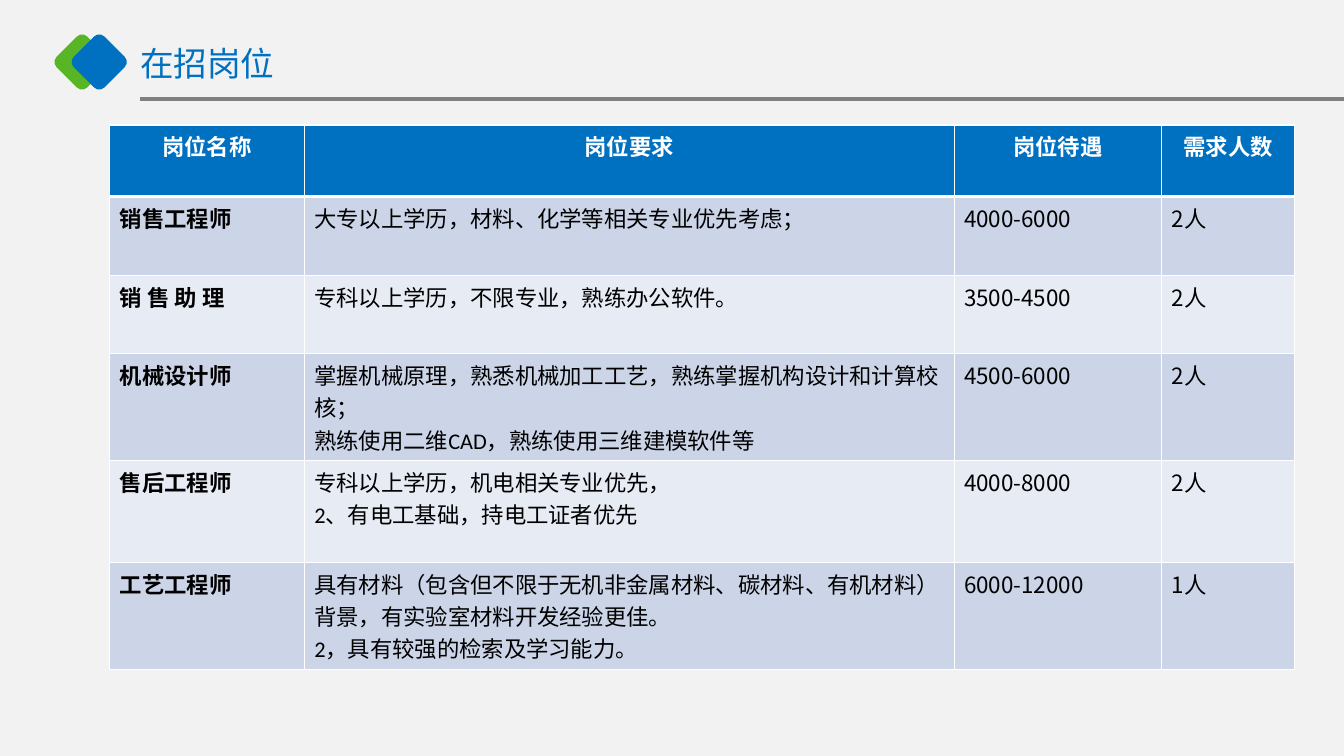
from dataclasses import dataclass

from lxml.etree import SubElement
from pptx import Presentation
from pptx.dml.color import RGBColor
from pptx.enum.lang import MSO_LANGUAGE_ID as LANG
from pptx.enum.shapes import MSO_CONNECTOR as CONNECTOR, MSO_SHAPE as SHAPE
from pptx.enum.text import MSO_ANCHOR as ANCHOR, MSO_AUTO_SIZE as AUTO_SIZE, PP_ALIGN as ALIGN
from pptx.oxml.ns import qn
from pptx.util import Emu, Pt

PX_PER_INCH = 100
CJK, LATIN = "Noto Sans CJK SC", "Calibri"
BLUE, GREEN, GRAY, PALE = "0070C0", "58B525", "808080", "F2F2F2"
WHITE, BLACK = "FFFFFF", "000000"
BANDS = ("CCD5E8", "E7EBF4")


@dataclass(frozen=True)
class Diamond:
    left: int
    color: str


@dataclass(frozen=True)
class Column:
    heading: str
    width: int
    font: str
    bold: bool = False


@dataclass(frozen=True)
class Job:
    height: int
    name: str
    needs: str
    pay: str
    count: str


DIAMONDS = (Diamond(60, GREEN), Diamond(77, BLUE))
COLUMNS = (
    Column("岗位名称", 193, LATIN, True),
    Column("岗位要求", 645, LATIN),
    Column("岗位待遇", 206, CJK),
    Column("需求人数", 132, CJK),
)
HEADER_HEIGHT = 71
JOBS = (
    Job(78, "销售工程师", "大专以上学历，材料、化学等相关专业优先考虑；", "4000-6000", "2人"),
    Job(78, "销 售 助 理", "专科以上学历，不限专业，熟练办公软件。", "3500-4500", "2人"),
    Job(106, "机械设计师",
        "掌握机械原理，熟悉机械加工工艺，熟练掌握机构设计和计算校核；\n"
        "熟练使用二维CAD，熟练使用三维建模软件等", "4500-6000", "2人"),
    Job(101, "售后工程师",
        "专科以上学历，机电相关专业优先，\n2、有电工基础，持电工证者优先", "4000-8000", "2人"),
    Job(106, "工艺工程师",
        "具有材料（包含但不限于无机非金属材料、碳材料、有机材料）背景，有实验室材料开发经验更佳。\n"
        "2，具有较强的检索及学习能力。", "6000-12000", "1人"),
)


def px(n: int) -> Emu:
    return Emu(n * 914400 // PX_PER_INCH)


def rgb(color: str) -> RGBColor:
    return RGBColor.from_string(color)


def add_run(p, text: str, size: int, color: str, font: str, bold: bool = False) -> None:
    r = p.add_run()
    r.text = text
    r.font.size, r.font.bold, r.font.name = Pt(size), bold, font
    r.font.color.rgb = rgb(color)
    r.font.language_id = LANG.SIMPLIFIED_CHINESE
    latin = r.font._element.find(qn("a:latin"))
    ea = latin.makeelement(qn("a:ea"), {"typeface": CJK})
    latin.addnext(ea)


def add_diamond(slide, diamond: Diamond) -> None:
    sp = slide.shapes.add_shape(SHAPE.ROUNDED_RECTANGLE, px(diamond.left), px(40), px(43), px(43))
    sp.rotation = 315
    sp.shadow.inherit = False
    sp.fill.solid()
    sp.fill.fore_color.rgb = rgb(diamond.color)
    sp.line.fill.background()


def add_rule(slide) -> None:
    line = slide.shapes.add_connector(CONNECTOR.STRAIGHT, px(139), px(98), px(1334), px(98))
    line.line.color.rgb = rgb(GRAY)
    line.line.width = Pt(3)
    SubElement(line._element.spPr, qn("a:effectLst"))


def set_title(slide, text: str) -> None:
    sp = slide.shapes.title
    sp.left, sp.top, sp.width, sp.height = px(132), px(39), px(860), px(48)
    tf = sp.text_frame
    tf.auto_size, tf.word_wrap = AUTO_SIZE.NONE, True
    tf.vertical_anchor = ANCHOR.MIDDLE
    tf.margin_left = tf.margin_right = px(7)
    tf.margin_top = tf.margin_bottom = px(4)
    p = tf.paragraphs[0]
    p.alignment = ALIGN.LEFT
    add_run(p, text, 24, BLUE, CJK)


def set_borders(cell, top: int, bottom: int) -> None:
    tc_pr = cell._tc.get_or_add_tcPr()
    widths = {"a:lnL": 1, "a:lnR": 1, "a:lnT": top, "a:lnB": bottom}
    for i, (tag, width) in enumerate(widths.items()):
        ln = tc_pr.makeelement(qn(tag), {"w": str(Pt(width))})
        fill = SubElement(ln, qn("a:solidFill"))
        SubElement(fill, qn("a:srgbClr"), val=WHITE)
        tc_pr.insert(i, ln)


def fill_cell(cell, text: str, fill: str, color: str, font: str, bold: bool, align) -> None:
    cell.fill.solid()
    cell.fill.fore_color.rgb = rgb(fill)
    p = cell.text_frame.paragraphs[0]
    p.alignment = align
    for i, line in enumerate(text.split("\n")):
        if i:
            p.add_line_break()
        add_run(p, line, 16, color, font, bold)


def add_jobs_table(slide) -> None:
    heights = [HEADER_HEIGHT] + [job.height for job in JOBS]
    width = sum(col.width for col in COLUMNS)
    table = slide.shapes.add_table(len(heights), len(COLUMNS), px(109), px(124),
                                   px(width), px(sum(heights))).table
    for row, height in zip(table.rows, heights):
        row.height = px(height)
    for c, col in enumerate(COLUMNS):
        table.columns[c].width = px(col.width)
        header = table.cell(0, c)
        fill_cell(header, col.heading, BLUE, WHITE, CJK, True, ALIGN.CENTER)
        set_borders(header, 1, 3)
        for r, job in enumerate(JOBS):
            text = (job.name, job.needs, job.pay, job.count)[c]
            cell = table.cell(r + 1, c)
            fill_cell(cell, text, BANDS[r % 2], BLACK, col.font, col.bold, ALIGN.LEFT)
            set_borders(cell, 1 if r else 3, 1)


def main() -> None:
    prs = Presentation()
    prs.slide_width, prs.slide_height = px(1334), px(750)
    s = prs.slides.add_slide(prs.slide_layouts[5])
    s.background.fill.solid()
    s.background.fill.fore_color.rgb = rgb(PALE)
    add_rule(s)
    for diamond in DIAMONDS:
        add_diamond(s, diamond)
    set_title(s, "在招岗位")
    add_jobs_table(s)
    prs.save("out.pptx")


if __name__ == "__main__":
    main()
